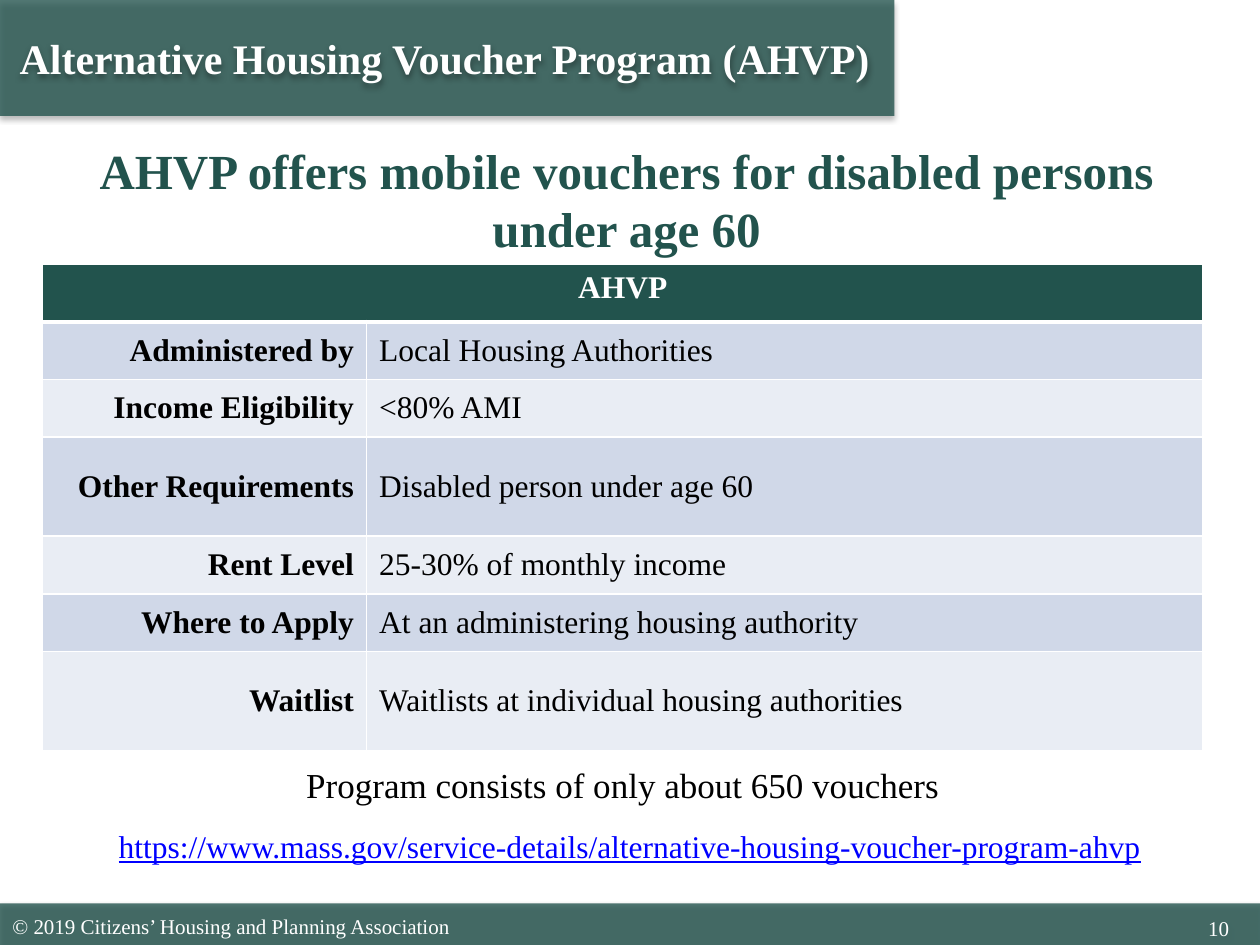
from lxml import etree
from pptx import Presentation
from pptx.dml.color import RGBColor
from pptx.enum import shapes, text
from pptx.oxml import parse_xml
from pptx.oxml.ns import nsdecls, qn
from pptx.util import Cm, Pt

GREEN = RGBColor(0x22, 0x53, 0x4D)
WHITE = RGBColor(0xFF, 0xFF, 0xFF)
BLACK = RGBColor(0x00, 0x00, 0x00)
LINK_BLUE = RGBColor(0x00, 0x00, 0xFF)
BAND_DARK = RGBColor(0xD0, 0xD8, 0xE8)
BAND_LIGHT = RGBColor(0xE9, 0xED, 0xF4)
FONT = "Times New Roman"
LEFT, CENTER, RIGHT = text.PP_ALIGN.LEFT, text.PP_ALIGN.CENTER, text.PP_ALIGN.RIGHT
TOP, MIDDLE = text.MSO_ANCHOR.TOP, text.MSO_ANCHOR.MIDDLE


def write(frame, words, size, color, align=LEFT, bold=False, anchor=MIDDLE):
    frame.word_wrap = True
    frame.vertical_anchor = anchor
    paragraph = frame.paragraphs[0]
    paragraph.text = words
    paragraph.alignment = align
    font = paragraph.font
    font.name, font.size, font.bold = FONT, Pt(size), bold
    font.color.rgb = color
    return paragraph


def add_shadow(shape):
    shape._element.spPr.append(parse_xml(
        f'<a:effectLst {nsdecls("a")}><a:outerShdw blurRad="39370" dist="22860" dir="5400000" '
        'rotWithShape="0"><a:srgbClr val="000000"><a:alpha val="35000"/></a:srgbClr>'
        '</a:outerShdw></a:effectLst>'))


prs = Presentation()
prs.slide_width, prs.slide_height = Cm(25.4), Cm(19.05)
slide = prs.slides.add_slide(prs.slide_layouts[6])

# Header and footer bands
bands = []
for top, width, height in [(0, 18.03, 2.34), (18.21, 25.4, 0.84)]:
    band = slide.shapes.add_shape(
        shapes.MSO_SHAPE.RECTANGLE, 0, Cm(top), Cm(width), Cm(height))
    band.fill.solid()
    band.fill.fore_color.rgb = GREEN
    color = band.fill._xPr.find(qn("a:solidFill"))[0]
    etree.SubElement(color, qn("a:alpha")).set("val", "78000")
    band.line.fill.background()
    add_shadow(band)
    bands.append(band)

footer = bands[1].text_frame
footer.margin_top = footer.margin_bottom = 0
footer.margin_left, footer.margin_right = Cm(0.51), Cm(0.62)
page_number = write(footer, "10", 12, WHITE, RIGHT, anchor=TOP)
page_number.line_spacing = 1.5

# Text lines: left, top, width, height, words, size, colour, align, bold, anchor, inset
lines = [
    (0, 18.29, 18.31, 0.76, "© 2019 Citizens’ Housing and Planning Association",
     12, WHITE, LEFT, False, MIDDLE, True),
    (0.86, 2.31, 23.39, 3.4, "AHVP offers mobile vouchers for disabled persons under age 60",
     28, GREEN, CENTER, True, MIDDLE, False),
    (0, 0, 17.78, 2.31, "Alternative Housing Voucher Program (AHVP)",
     24, WHITE, CENTER, True, MIDDLE, False),
    (0.86, 15.27, 23.39, 1.12, "Program consists of only about 650 vouchers",
     20, BLACK, CENTER, False, TOP, True),
    (0, 16.54, 25.4, 1.02,
     "https://www.mass.gov/service-details/alternative-housing-voucher-program-ahvp",
     18, LINK_BLUE, CENTER, False, TOP, True),
]
for left, top, width, height, words, size, color, align, bold, anchor, inset in lines:
    box = slide.shapes.add_textbox(Cm(left), Cm(top), Cm(width), Cm(height))
    frame = box.text_frame
    paragraph = write(frame, words, size, color, align, bold, anchor)
    if not inset:
        frame.margin_left = frame.margin_right = frame.margin_top = frame.margin_bottom = 0
        paragraph._p.get_or_add_pPr().set("marL", str(Cm(0.15)))
    if color == LINK_BLUE:
        paragraph.font.underline = True
    if size == 24:
        add_shadow(box)

# Program table
facts = [
    ("Administered by", "Local Housing Authorities"),
    ("Income Eligibility", "<80% AMI"),
    ("Other Requirements", "Disabled person under age 60"),
    ("Rent Level", "25-30% of monthly income"),
    ("Where to Apply", "At an administering housing authority"),
    ("Waitlist", "Waitlists at individual housing authorities"),
]
table = slide.shapes.add_table(
    len(facts) + 1, 2, Cm(0.86), Cm(5.33), Cm(23.39), Cm(9.8)).table
table.columns[0].width, table.columns[1].width = Cm(6.53), Cm(16.86)
for row, height in zip(table.rows, [1.16, 1.16, 1.16, 2, 1.16, 1.16, 2]):
    row.height = Cm(height)

table.cell(0, 0).merge(table.cell(0, 1))
write(table.cell(0, 0).text_frame, "AHVP", 18, WHITE, CENTER, True)
table.cell(0, 0).vertical_anchor = TOP
for r, (label, detail) in enumerate(facts, 1):
    write(table.cell(r, 0).text_frame, label, 18, BLACK, RIGHT, True)
    write(table.cell(r, 1).text_frame, detail, 18, BLACK)

for r, row in enumerate(table.rows):
    for cell in row.cells:
        if r:
            cell.vertical_anchor = MIDDLE
        properties = cell._tc.get_or_add_tcPr()
        for side in "LRTB":
            thick = (r, side) in [(0, "B"), (1, "T")]
            properties.append(parse_xml(
                f'<a:ln{side} {nsdecls("a")} w="{Pt(3 if thick else 1)}"><a:solidFill>'
                f'<a:srgbClr val="{WHITE}"/></a:solidFill></a:ln{side}>'))
        cell.fill.solid()
        cell.fill.fore_color.rgb = GREEN if r == 0 else BAND_DARK if r % 2 else BAND_LIGHT

prs.save("out.pptx")
